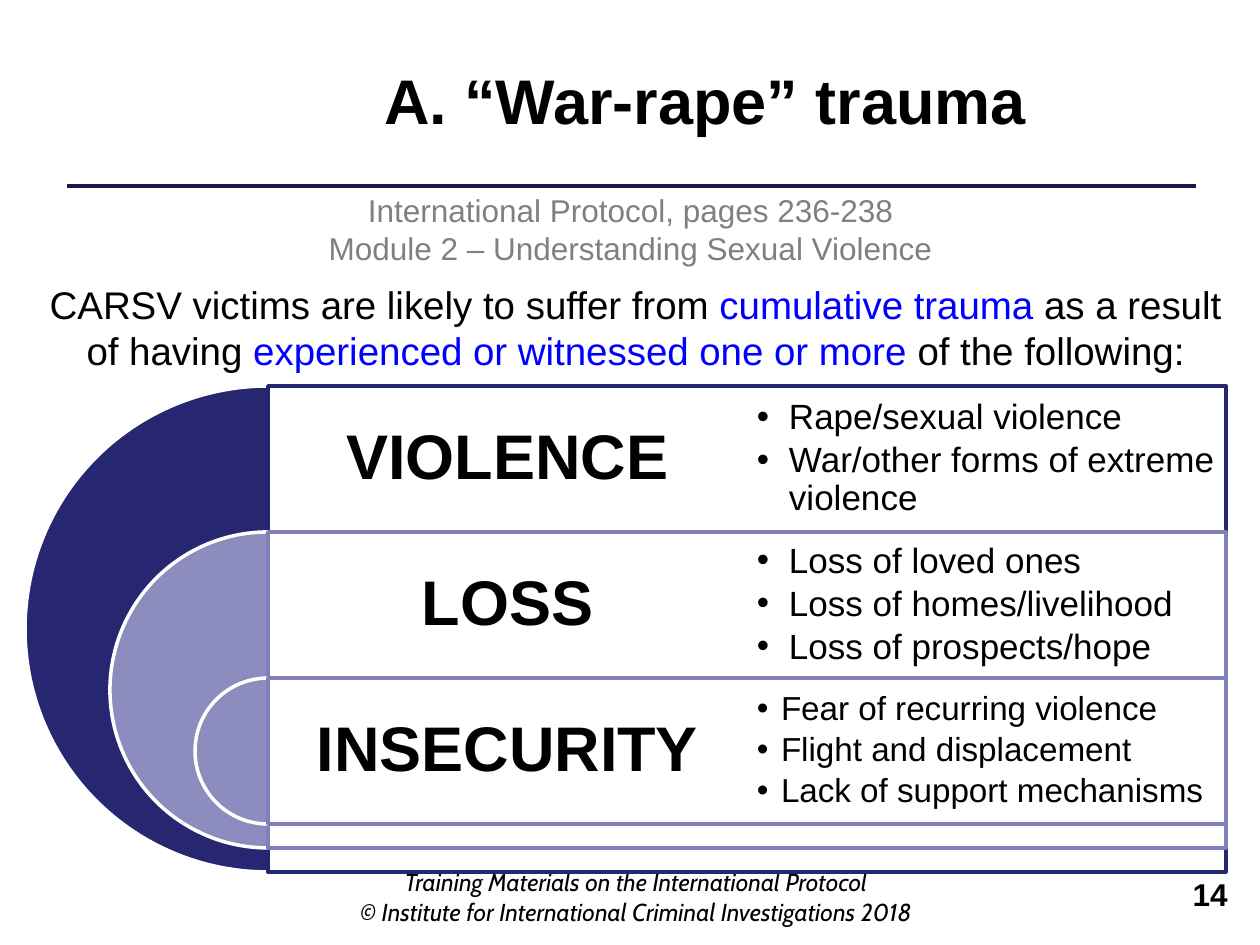
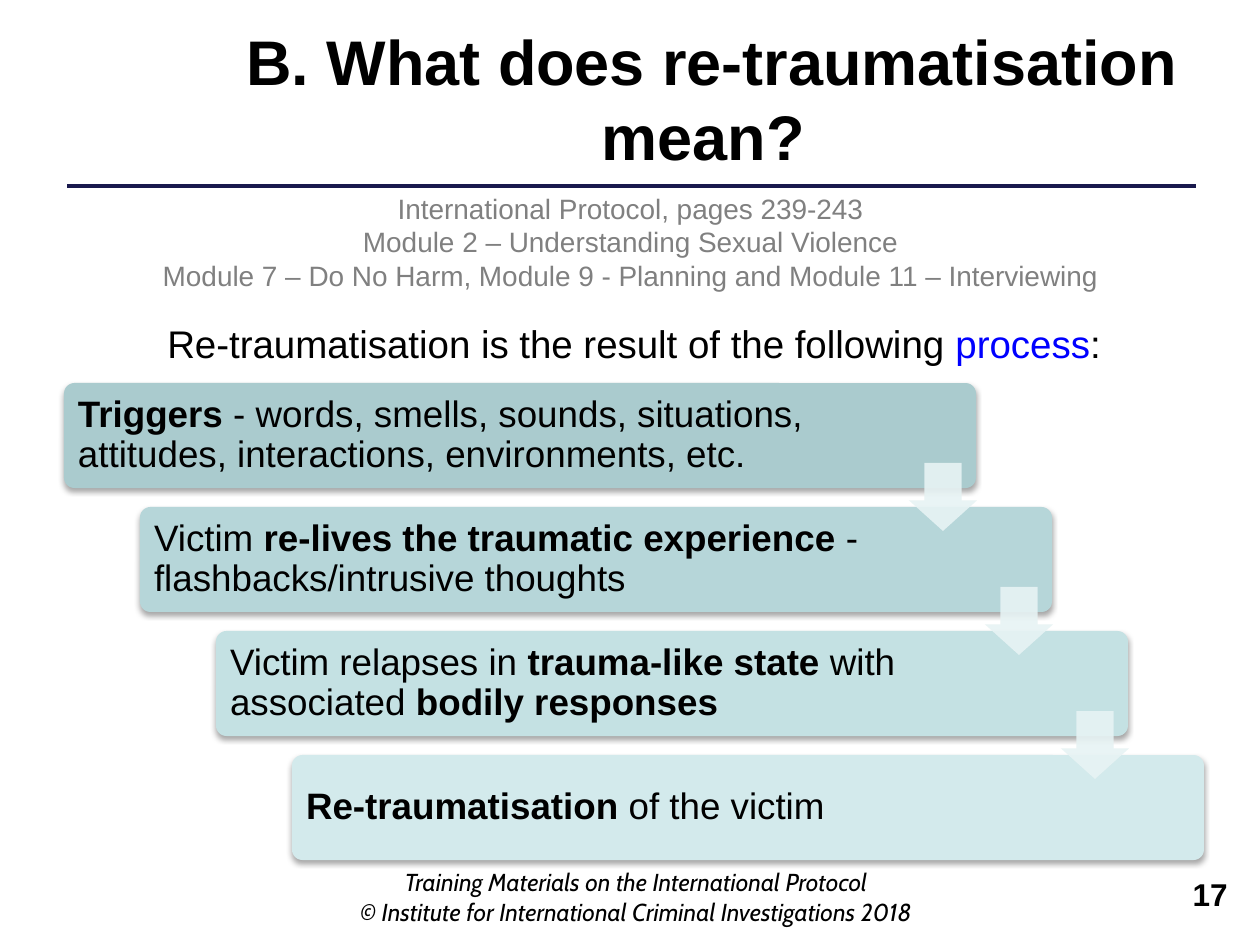
from lxml.etree import SubElement
from pptx import Presentation
from pptx.dml.color import RGBColor
from pptx.enum.shapes import MSO_CONNECTOR, MSO_SHAPE
from pptx.enum.text import MSO_ANCHOR, PP_ALIGN
from pptx.oxml.ns import qn
from pptx.util import Emu, Pt

COLORS = {
    "text": "000000",
    "reference": "808080",
    "highlight": "0000FF",
    "rule": "19194D",
    "paper": "FFFFFF",
    "navy": "262671",
    "lavender": "8C8CBF",
    "lavender_line": "8080B9",
    "step_arrow": "E7F3F4",
}
STEP_FILLS = ["AACBCE", "B6D6D9", "C4E1E3", "D3EAEC"]
FOOTER = [
    "Training Materials on the International Protocol",
    "© Institute for International Criminal Investigations 2018",
]
TRAUMAS = [
    ("VIOLENCE", ["Rape/sexual violence", "War/other forms of extreme violence"], 20, 32),
    ("LOSS", ["Loss of loved ones", "Loss of homes/livelihood", "Loss of prospects/hope"], 20, 32),
    ("INSECURITY", ["Fear of recurring violence", "Flight and displacement",
                    "Lack of support mechanisms"], 19, 24),
]
STEPS = [
    "*Triggers* - words, smells, sounds, situations, attitudes, interactions, environments, etc.",
    "Victim *re-lives the traumatic experience* - flashbacks/intrusive thoughts",
    "Victim relapses in *trauma-like state* with associated *bodily responses*",
    "*Re-traumatisation* of the victim",
]


def px(length):
    return Emu(round(length * 914400 / 126))


def rgb(name):
    return RGBColor.from_string(COLORS.get(name, name))


def add_bullet(paragraph, indent):
    properties = paragraph._p.get_or_add_pPr()
    properties.set("marL", str(px(indent)))
    properties.set("indent", str(-px(indent)))
    SubElement(properties, qn("a:buFont")).set("typeface", "Arial")
    SubElement(properties, qn("a:buChar")).set("char", "•")


def add_text(slide, box, lines, size, color="text", face="Arial", bold=False, italic=False,
             align=PP_ALIGN.CENTER, inset=None, spacing=None, after=0, bullet=0,
             emphasis="highlight"):
    frame = slide.shapes.add_textbox(*map(px, box)).text_frame
    frame.word_wrap = True
    if inset is not None:
        frame.vertical_anchor = MSO_ANCHOR.MIDDLE
        frame.margin_left = frame.margin_right = px(inset)
        frame.margin_top = frame.margin_bottom = px(inset)
    for number, line in enumerate(lines):
        paragraph = frame.add_paragraph() if number else frame.paragraphs[0]
        paragraph.alignment = align
        if spacing:
            paragraph.line_spacing = spacing
            paragraph.space_after = Pt(after)
        if bullet:
            add_bullet(paragraph, bullet)
        font = paragraph.font
        font.name, font.size = face, Pt(size)
        font.bold, font.italic = bold, italic
        font.color.rgb = rgb(color)
        for part, words in enumerate(line.split("*")):
            if not words:
                continue
            run = paragraph.add_run()
            run.text = words
            if part % 2 and emphasis == "bold":
                run.font.bold = True
            elif part % 2:
                run.font.color.rgb = rgb(emphasis)


def add_shape(slide, kind, box, fill, line=None, adjustments=(), alpha=None):
    shape = slide.shapes.add_shape(kind, *map(px, box))
    shape.shadow.inherit = False
    for number, value in enumerate(adjustments):
        shape.adjustments[number] = value
    shape.fill.solid()
    shape.fill.fore_color.rgb = rgb(fill)
    if alpha:
        tint = next(shape.element.spPr.iter(qn("a:srgbClr")))
        SubElement(tint, qn("a:alpha")).set("val", str(alpha * 1000))
    if line:
        shape.line.color.rgb = rgb(line)
        shape.line.width = Pt(2)
    else:
        shape.line.fill.background()
    return shape


def add_drop_shadow(shape):
    effects = shape.element.spPr.find(qn("a:effectLst"))
    shadow = SubElement(effects, qn("a:outerShdw"), blurRad=str(Pt(3.1)), dist=str(Pt(1.8)),
                        dir="5400000", rotWithShape="0")
    tint = SubElement(shadow, qn("a:srgbClr"), val=COLORS["text"])
    SubElement(tint, qn("a:alpha")).set("val", "35000")


def add_frame(presentation, title, title_box, references, reference_size, page):
    slide = presentation.slides.add_slide(presentation.slide_layouts[6])
    rule = slide.shapes.add_connector(MSO_CONNECTOR.STRAIGHT, px(1196), px(186), px(67), px(186))
    rule.line.color.rgb = rgb("rule")
    rule.line.width = Pt(2.5)
    SubElement(rule._element.spPr, qn("a:effectLst"))
    add_text(slide, (343, 861, 586, 66), FOOTER, 14, face="Cabin", italic=True)
    add_text(slide, title_box, [title], 36, bold=True)
    add_text(slide, (917, 869, 323, 66), [page], 18, bold=True, align=PP_ALIGN.RIGHT)
    add_text(slide, (35, 185, 1191, 90), references, reference_size, color="reference")
    return slide


def add_nested_traumas(slide, box):
    left, top, width, height = box
    row, shrink = 146, 170
    panel_left = left + height // 2
    panel_width = width - height // 2
    column = panel_width // 2
    for level, (name, examples, size, indent) in enumerate(TRAUMAS):
        diameter = height - shrink * level
        row_top = top + row * level
        fill, line = ("lavender", "lavender_line") if level else ("navy", "navy")
        add_shape(slide, MSO_SHAPE.PIE,
                  (panel_left - diameter // 2, row_top, diameter, diameter),
                  fill, "paper", (54, 162))
        add_shape(slide, MSO_SHAPE.RECTANGLE, (panel_left, row_top, panel_width, diameter),
                  "paper", line, alpha=90)
        add_text(slide, (panel_left, row_top, column, row), [name], 36, bold=True,
                 inset=19, spacing=0.9)
        add_text(slide, (panel_left + column, row_top, column, row), examples, size,
                 align=PP_ALIGN.LEFT, inset=10, spacing=0.9, after=3, bullet=indent)


def add_staircase(slide, box):
    left, top, width, height = box
    step_height, shift = 105, 76
    last = len(STEPS) - 1
    step_width = width - shift * last
    drop = (height - step_height) // last
    places = [(left + shift * i, top + drop * i) for i in range(len(STEPS))]
    for (x, y), step, fill in zip(places, STEPS, STEP_FILLS):
        block = add_shape(slide, MSO_SHAPE.ROUNDED_RECTANGLE, (x, y, step_width, step_height),
                          fill, adjustments=(0.1,))
        add_drop_shadow(block)
        text_width = 763 if y > top else 791
        add_text(slide, (x + 3, y + 3, text_width, step_height - 6), [step], 21,
                 align=PP_ALIGN.LEFT, inset=11, spacing=0.9, emphasis="bold")
    for x, y in places[:-1]:
        add_shape(slide, MSO_SHAPE.DOWN_ARROW, (x + step_width - 67, y + 80, 68, 68),
                  "step_arrow", adjustments=(0.55, 0.45), alpha=90)


def build_war_rape_slide(presentation):
    slide = add_frame(presentation, "A. “War-rape” trauma", (184, 55, 1042, 89),
                      ["International Protocol, pages 236-238",
                       "Module 2 – Understanding Sexual Violence"], 18, "14")
    add_text(slide, (35, 275, 1201, 106),
             ["CARSV victims are likely to suffer from *cumulative trauma* as a result of having "
              "*experienced or witnessed one or more* of the following:"], 22)
    add_nested_traumas(slide, (25, 386, 1201, 486))


def build_retraumatisation_slide(presentation):
    slide = add_frame(presentation, "B. What does re-traumatisation mean? ", (164, 16, 1096, 165),
                      ["International Protocol, pages 239-243",
                       "Module 2 – Understanding Sexual Violence",
                       "Module 7 – Do No Harm, Module 9 - Planning and Module 11 – Interviewing"],
                      16, "17")
    add_staircase(slide, (64, 383, 1140, 477))
    add_text(slide, (54, 314, 1160, 59),
             ["Re-traumatisation is the result of the following *process*:"], 22)


def main():
    presentation = Presentation()
    presentation.slide_width, presentation.slide_height = px(1260), px(945)
    build_war_rape_slide(presentation)
    build_retraumatisation_slide(presentation)
    presentation.save("out.pptx")


if __name__ == "__main__":
    main()
